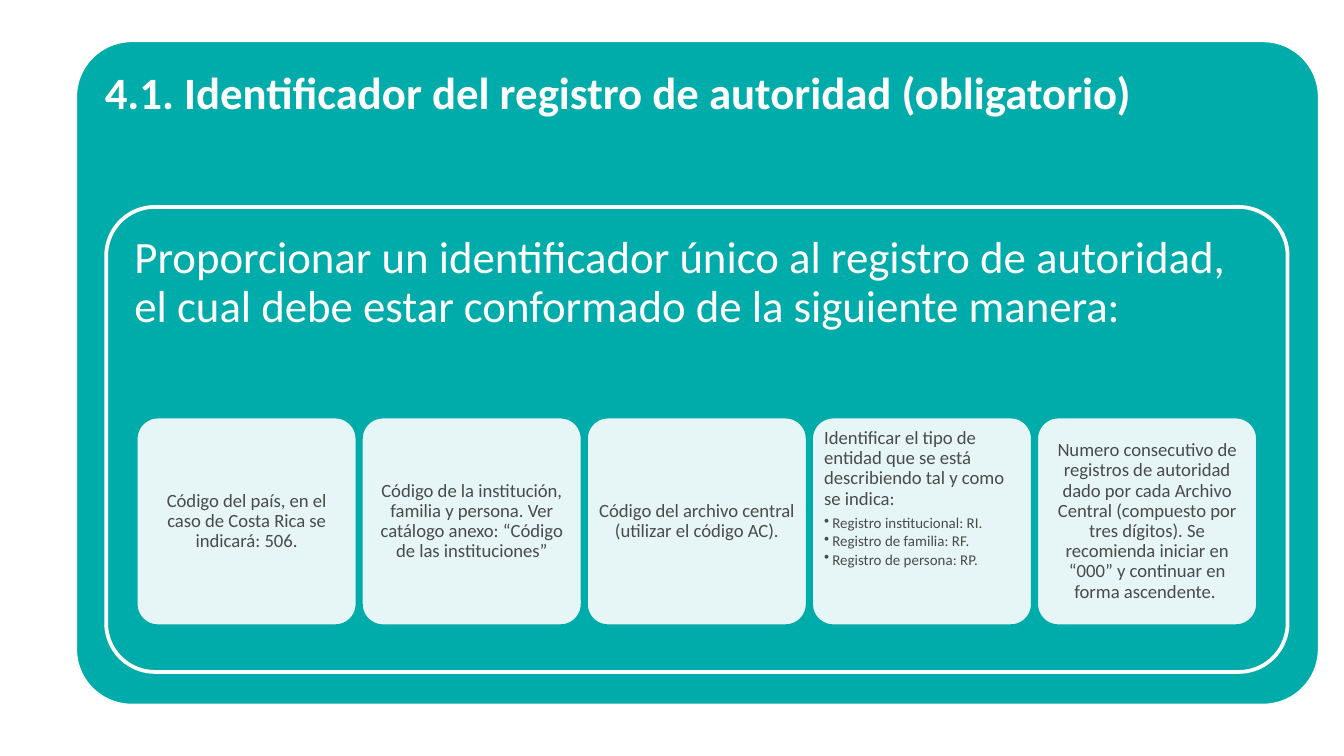
from lxml import etree
from pptx import Presentation
from pptx.dml.color import RGBColor
from pptx.enum import shapes, text
from pptx.oxml.ns import qn
from pptx.util import Inches, Pt

COLORS = {"teal": "00ACA9", "white": "FFFFFF", "gray": "4A4A49"}
FONT = "Calibri"
LEFT, CENTER = text.PP_ALIGN.LEFT, text.PP_ALIGN.CENTER
TOP, MIDDLE = text.MSO_ANCHOR.TOP, text.MSO_ANCHOR.MIDDLE


def rgb(name):
    return RGBColor.from_string(COLORS[name])


def write(p, content, size=10, color="gray", bold=False, align=LEFT,
          after=0.35, bullet=None):
    """Fill a paragraph; the space after is a share of the text size."""
    pPr = p._p.get_or_add_pPr()
    indent = Inches(0.06) if bullet else 0
    pPr.set("marL", str(indent))
    pPr.set("indent", str(-indent))
    if bullet:
        etree.SubElement(pPr, qn("a:buChar")).set("char", bullet)
    else:
        etree.SubElement(pPr, qn("a:buNone"))
    p.alignment = align
    p.line_spacing = 0.9
    p.space_before = Pt(0)
    p.space_after = Pt(round(size * after, 1))
    r = p.add_run()
    r.text = content
    r.font.name, r.font.size, r.font.bold = FONT, Pt(size), bold
    r.font.color.rgb = rgb(color)


class SlideBuilder:
    def __init__(self, s):
        self.s = s

    def frame(self, sp, inset_x, inset_y, anchor):
        tf = sp.text_frame
        tf.word_wrap = True
        tf.auto_size = text.MSO_AUTO_SIZE.NONE
        tf.vertical_anchor = anchor
        tf.margin_left = tf.margin_right = Inches(inset_x)
        tf.margin_top = tf.margin_bottom = Inches(inset_y)
        return tf

    def panel(self, x, y, w, h, adj, fill="teal", line="white", alpha=None):
        sp = self.s.shapes.add_shape(
            shapes.MSO_SHAPE.ROUNDED_RECTANGLE,
            Inches(x), Inches(y), Inches(w), Inches(h))
        sp.adjustments[0] = adj
        sp.shadow.inherit = False
        sp.fill.solid()
        sp.fill.fore_color.rgb = rgb(fill)
        if alpha:
            clr = sp._element.spPr.find(qn("a:solidFill"))[0]
            etree.SubElement(clr, qn("a:alpha")).set("val", str(alpha * 1000))
        sp.line.color.rgb = rgb(line)
        sp.line.width = Pt(2)
        return sp

    def heading(self, sp, x, y, w, h, content, bold=False):
        sp.left, sp.top = Inches(x), Inches(y)
        sp.width, sp.height = Inches(w), Inches(h)
        # Bring the placeholder in front of its panel
        sp._element.getparent().append(sp._element)
        tf = self.frame(sp, 0.1, 0.1, TOP)
        write(tf.paragraphs[0], content, size=24, color="white", bold=bold)

    def card(self, x, content, items=()):
        sp = self.panel(x, 3.1, 1.65, 1.56, 0.105, "white", "teal", alpha=90)
        # The rounded corners already add 0.05 in around the text
        tf = self.frame(sp, 0.05, 0.04, TOP if items else MIDDLE)
        write(tf.paragraphs[0], content, align=LEFT if items else CENTER)
        for item in items:
            write(tf.add_paragraph(), item, size=8, after=0.15, bullet="•")


CARDS = [
    ("Código del país, en el caso de Costa Rica se indicará: 506.", ()),
    ("Código de la institución, familia y persona. Ver catálogo anexo: "
     "“Código de las instituciones”", ()),
    ("Código del archivo central (utilizar el código AC).", ()),
    ("Identificar el tipo de entidad que se está describiendo tal y como "
     "se indica:",
     ("Registro institucional: RI.", "Registro de familia: RF.",
      "Registro de persona: RP.")),
    ("Numero consecutivo de registros de autoridad dado por cada Archivo "
     "Central (compuesto por tres dígitos). Se recomienda iniciar en “000” "
     "y continuar en forma ascendente. ", ()),
]


def main():
    prs = Presentation()
    # Widescreen, 16:9
    prs.slide_width, prs.slide_height = Inches(10), Inches(10 * 9 / 16)
    s = prs.slides.add_slide(prs.slide_layouts[1])
    b = SlideBuilder(s)

    # Outer panel with the title
    b.panel(0.56, 0.3, 9.26, 4.95, 0.085)
    b.heading(s.shapes.title, 0.68, 0.43, 9.01, 0.86,
              "4.1. Identificador del registro de autoridad (obligatorio)",
              bold=True)

    # Inner panel with the introduction
    b.panel(0.79, 1.54, 8.79, 3.46, 0.105)
    b.heading(s.placeholders[1], 0.9, 1.65, 8.58, 1.05,
              "Proporcionar un identificador único al registro de autoridad, "
              "el cual debe estar conformado de la siguiente manera:")

    # Row of cards, one for each part of the identifier
    pitch = (7.71 - 1.01) / (len(CARDS) - 1)
    for i, (content, items) in enumerate(CARDS):
        b.card(1.01 + i * pitch, content, items)

    prs.save("out.pptx")


if __name__ == "__main__":
    main()
